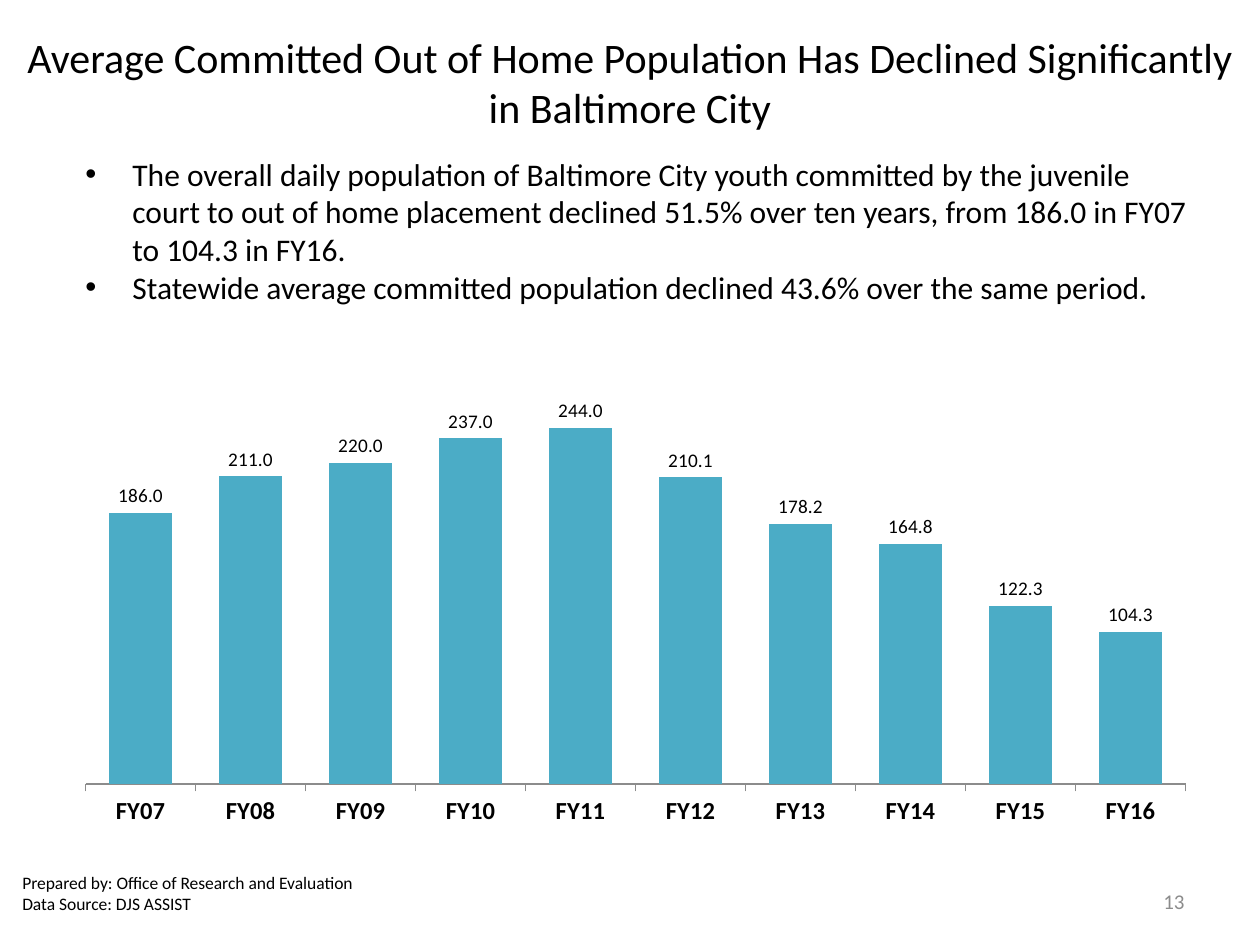
from dataclasses import dataclass

import pptx
import pptx.chart.data
import pptx.dml.color
import pptx.enum.chart
import pptx.enum.text
import pptx.oxml
import pptx.oxml.ns
import pptx.util
from pptx.util import Cm, Pt

FONT = "Calibri"
BLACK = pptx.dml.color.RGBColor(0x00, 0x00, 0x00)
GRAY = pptx.dml.color.RGBColor(0x8C, 0x8C, 0x8C)
TEAL = pptx.dml.color.RGBColor(0x4B, 0xAC, 0xC6)
ALIGN = pptx.enum.text.PP_ALIGN


@dataclass
class TextBlock:
    left: float
    top: float
    width: float
    height: float
    lines: list[str]
    size: float
    color: pptx.dml.color.RGBColor = BLACK
    alignment: ALIGN = ALIGN.LEFT
    bulleted: bool = False


TITLE = TextBlock(
    0, 0.76, 25.4, 1.78,
    ["Average Committed Out of Home Population Has Declined Significantly in Baltimore City"],
    24, alignment=ALIGN.CENTER)

TEXT_BLOCKS = [
    TextBlock(1.47, 2.72, 22.86, 3.84, [
        "The overall daily population of Baltimore City youth committed by the juvenile court "
        "to out of home placement declined 51.5% over ten years, from 186.0 in FY07 to 104.3 in FY16.",
        "Statewide average committed population declined 43.6% over the same period.",
    ], 18, bulleted=True),
    TextBlock(18.21, 17.65, 5.92, 1.02, ["13"], 12, GRAY, ALIGN.RIGHT),
    TextBlock(0.2, 17.35, 7.42, 1.32, [
        "Prepared by: Office of Research and Evaluation",
        "Data Source:\u00a0DJS ASSIST".replace("\u00a0", " "),
    ], 10),
]

# Latest year first; the category axis is reversed
POPULATION = {
    "FY16": 104.3, "FY15": 122.3, "FY14": 178.2 - 13.4, "FY13": 178.2, "FY12": 210.1,
    "FY11": 244, "FY10": 237, "FY09": 220, "FY08": 211, "FY07": 186,
}
POPULATION["FY14"] = 164.8


def add_bullet(paragraph) -> None:
    properties = paragraph._p.get_or_add_pPr()
    properties.set("marL", str(Cm(0.95)))
    properties.set("indent", str(-Cm(0.95)))
    properties.append(pptx.oxml.parse_xml(
        f'<a:buFont {pptx.oxml.ns.nsdecls("a")} typeface="Arial"/>'))
    properties.append(pptx.oxml.parse_xml(
        f'<a:buChar {pptx.oxml.ns.nsdecls("a")} char="•"/>'))


def fill_text(shape, block: TextBlock) -> None:
    shape.left, shape.top = Cm(block.left), Cm(block.top)
    shape.width, shape.height = Cm(block.width), Cm(block.height)
    text_frame = shape.text_frame
    text_frame.text = "\n".join(block.lines)
    text_frame.word_wrap = True
    text_frame.auto_size = pptx.enum.text.MSO_AUTO_SIZE.NONE
    text_frame.vertical_anchor = pptx.enum.text.MSO_ANCHOR.MIDDLE
    for paragraph in text_frame.paragraphs:
        paragraph.alignment = block.alignment
        if block.bulleted:
            add_bullet(paragraph)
        for run in paragraph.runs:
            set_font(run.font, block.size, block.color)


def set_font(font, size: float, color=BLACK, bold: bool = False) -> None:
    font.name = FONT
    font.size = Pt(size)
    font.bold = bold
    font.color.rgb = color


def set_plot_area(chart, x: float, y: float, width: float, height: float) -> None:
    plot_area = chart._chartSpace.chart.plotArea
    for layout in plot_area.findall(pptx.oxml.ns.qn("c:layout")):
        plot_area.remove(layout)
    plot_area.insert(0, pptx.oxml.parse_xml(
        f'<c:layout {pptx.oxml.ns.nsdecls("c")}><c:manualLayout>'
        '<c:layoutTarget val="inner"/><c:xMode val="edge"/><c:yMode val="edge"/>'
        f'<c:x val="{x}"/><c:y val="{y}"/><c:w val="{width}"/><c:h val="{height}"/>'
        '</c:manualLayout></c:layout>'))


def add_population_chart(slide) -> None:
    data = pptx.chart.data.CategoryChartData(number_format="0.0")
    data.categories = list(POPULATION)
    data.add_series("Series 1", list(POPULATION.values()))
    chart = slide.shapes.add_chart(
        pptx.enum.chart.XL_CHART_TYPE.COLUMN_CLUSTERED,
        Cm(1.27), Cm(6.88), Cm(22.86), Cm(10.26), data).chart
    chart.has_title = False
    chart.has_legend = False
    set_font(chart.font, 10)
    set_plot_area(chart, 0.02, 0.01, 0.97, 0.86)

    # Columns and their labels
    plot = chart.plots[0]
    plot.vary_by_categories = False
    plot.gap_width = 74
    plot.overlap = 52
    series = plot.series[0]
    series.format.fill.solid()
    series.format.fill.fore_color.rgb = TEAL
    labels = series.data_labels
    labels.show_value = True
    labels.number_format = "0.0"
    labels.number_format_is_linked = False
    labels.position = pptx.enum.chart.XL_LABEL_POSITION.OUTSIDE_END
    set_font(labels.font, 11)

    # Axes
    years = chart.category_axis
    years.reverse_order = True
    years.major_tick_mark = pptx.enum.chart.XL_TICK_MARK.OUTSIDE
    years.format.line.color.rgb = GRAY
    years.format.line.width = Pt(0.75)
    set_font(years.tick_labels.font, 14, bold=True)
    values = chart.value_axis
    values.minimum_scale = 0
    values.maximum_scale = 300
    values.has_major_gridlines = False
    values.tick_labels.number_format = "0.0"
    values.tick_labels.number_format_is_linked = False
    values.visible = False


def main() -> None:
    presentation = pptx.Presentation()
    presentation.slide_width, presentation.slide_height = Cm(25.4), Cm(19.05)
    slide = presentation.slides.add_slide(presentation.slide_layouts[5])
    fill_text(slide.shapes.title, TITLE)
    for block in TEXT_BLOCKS:
        fill_text(slide.shapes.add_textbox(0, 0, 0, 0), block)
    add_population_chart(slide)
    presentation.save("out.pptx")


if __name__ == "__main__":
    main()
